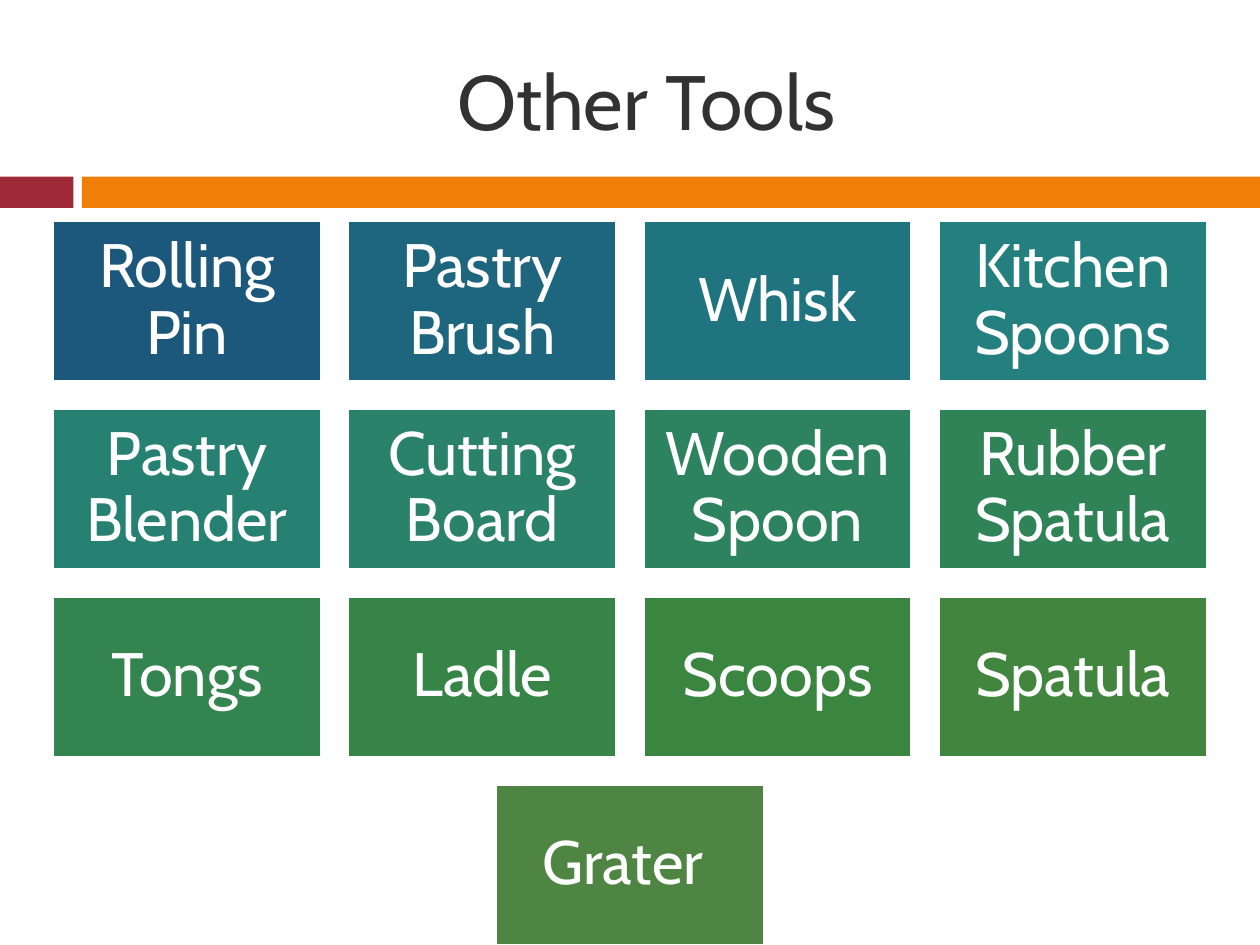
"""Builds the "Other Tools" slide: a title, a two-colour band and a grid of kitchen tools."""
import pptx
import pptx.dml.color
import pptx.enum.shapes
import pptx.enum.text
import pptx.oxml
import pptx.oxml.ns
import pptx.util

Cm = pptx.util.Cm
Pt = pptx.util.Pt

TITLE = "Other Tools"
TOOLS = [
    ("Rolling Pin", "1B587C"), ("Pastry Brush", "1E667D"),
    ("Whisk", "20747F"), ("Kitchen Spoons", "23807E"),
    ("Pastry Blender", "268173"), ("Cutting Board", "298269"),
    ("Wooden Spoon", "2D8260"), ("Rubber Spatula", "308357"),
    ("Tongs", "33844E"), ("Ladle", "378447"),
    ("Scoops", "3A8540"), ("Spatula", "42853E"),
    ("Grater ", "4E8542"),
]
COLORS = {"title": "323232", "white": "FFFFFF", "red": "9F2936", "orange": "F07F09"}
FONT = "Cabin"
SLIDE_WIDTH, SLIDE_HEIGHT = 25.4, 19.05
BAND_TOP, BAND_HEIGHT = 3.56, 0.63
BAND = [(0, 1.48, "red"), (1.65, SLIDE_WIDTH - 1.65, "orange")]
COLUMNS = 4
TILE_WIDTH = 5.41
TILE_HEIGHT = TILE_WIDTH * 0.6
GAP = TILE_WIDTH * 0.1
GRID_TOP = 4.45


def rgb(color):
    return pptx.dml.color.RGBColor.from_string(color)


def add_block(slide, left, top, width, height, color, outline=None):
    block = slide.shapes.add_shape(
        pptx.enum.shapes.MSO_SHAPE.RECTANGLE, Cm(left), Cm(top), Cm(width), Cm(height))
    block.shadow.inherit = False
    block.fill.solid()
    block.fill.fore_color.rgb = rgb(color)
    if outline:
        block.line.color.rgb = rgb(outline)
        block.line.width = Pt(1.5)
    else:
        block.line.fill.background()
    return block


def write(shape, text, *, size, color, inset=None, line_spacing=None, after_percent=None):
    frame = shape.text_frame
    frame.word_wrap = True
    frame.vertical_anchor = pptx.enum.text.MSO_ANCHOR.MIDDLE
    if inset is not None:
        frame.margin_left = frame.margin_right = Cm(inset)
        frame.margin_top = frame.margin_bottom = Cm(inset)
    paragraph = frame.paragraphs[0]
    paragraph.alignment = pptx.enum.text.PP_ALIGN.CENTER
    run = paragraph.add_run()
    run.text = text
    run.font.name = FONT
    run.font.size = Pt(size)
    run.font.color.rgb = rgb(color)
    if line_spacing:
        paragraph.line_spacing = line_spacing
    if after_percent:
        namespace = pptx.oxml.ns.nsdecls("a")
        paragraph._p.get_or_add_pPr().append(pptx.oxml.parse_xml(
            f'<a:spcAft {namespace}><a:spcPct val="{after_percent * 1000}"/></a:spcAft>'))


def main():
    deck = pptx.Presentation()
    deck.slide_width, deck.slide_height = Cm(SLIDE_WIDTH), Cm(SLIDE_HEIGHT)
    slide = deck.slides.add_slide(deck.slide_layouts[6])

    for left, width, color in BAND:
        add_block(slide, left, BAND_TOP, width, BAND_HEIGHT, COLORS[color])

    title = slide.shapes.add_textbox(Cm(1.7), Cm(0.64), Cm(22.66), Cm(2.74))
    write(title, TITLE, size=44, color=COLORS["title"])

    for start in range(0, len(TOOLS), COLUMNS):
        row = TOOLS[start:start + COLUMNS]
        row_width = len(row) * (TILE_WIDTH + GAP) - GAP
        row_left = (SLIDE_WIDTH - row_width) / 2
        top = GRID_TOP + start // COLUMNS * (TILE_HEIGHT + GAP)
        for column, (tool, color) in enumerate(row):
            left = row_left + column * (TILE_WIDTH + GAP)
            tile = add_block(slide, left, top, TILE_WIDTH, TILE_HEIGHT, color, COLORS["white"])
            write(tile, tool, size=35, color=COLORS["white"],
                  inset=0.38, line_spacing=0.9, after_percent=35)

    deck.save("out.pptx")


if __name__ == "__main__":
    main()
